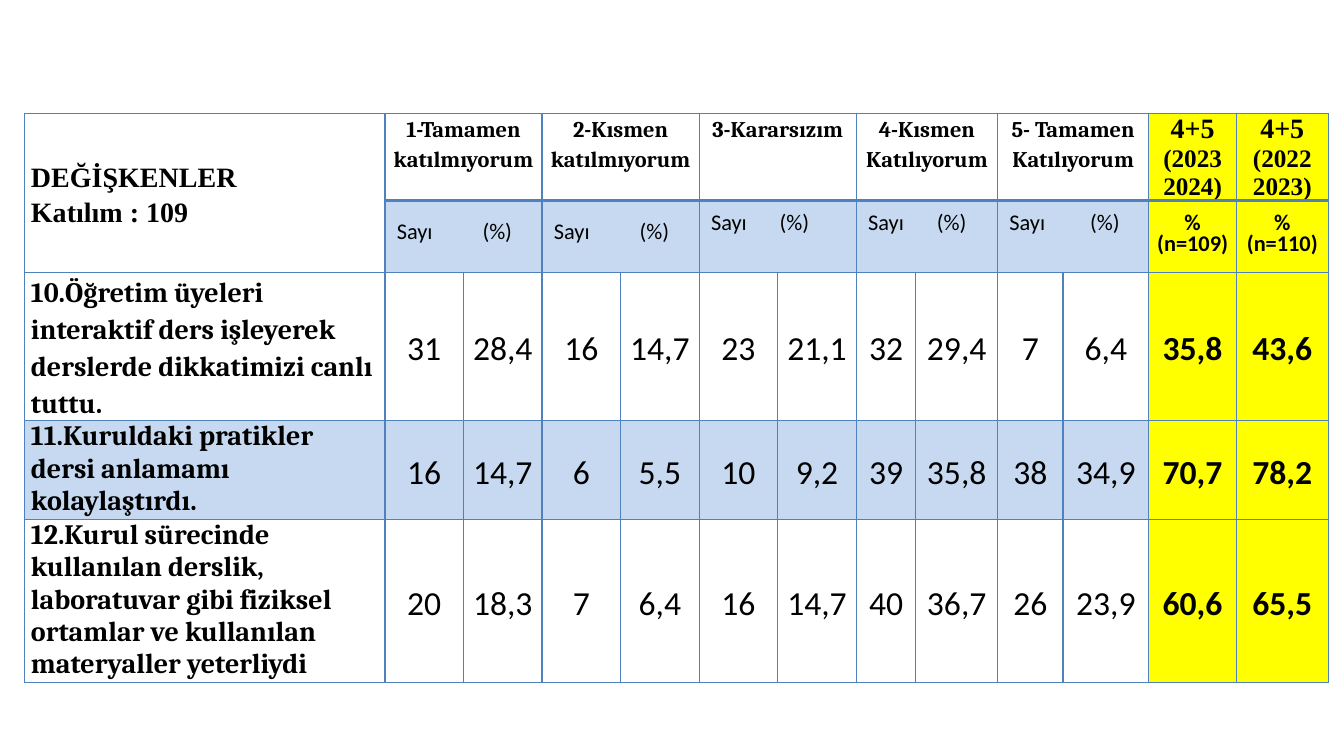
import pptx
import pptx.util
import pptx.dml.color
import pptx.enum.text
import pptx.oxml
from dataclasses import dataclass
from lxml import etree

Cm, Pt = pptx.util.Cm, pptx.util.Pt
ALIGN = pptx.enum.text.PP_ALIGN
ANCHOR = pptx.enum.text.MSO_ANCHOR
A = "{http://schemas.openxmlformats.org/drawingml/2006/main}"


@dataclass(frozen=True)
class Theme:
    ink: str = "000000"
    paper: str = "FFFFFF"
    band: str = "C6D9F1"
    highlight: str = "FFFF00"
    rule: str = "4F81BD"
    heading_font: str = "Times New Roman"
    label_font: str = "Cambria"
    number_font: str = "Calibri"
    small: int = 16
    medium: int = 18
    large: int = 20
    number: int = 24
    thin: float = 1
    thick: float = 2.25
    loose: float = 1.15


THEME = Theme()


def rgb(value):
    return pptx.dml.color.RGBColor.from_string(value)


def write(frame, text, *, font, size, bold=False, align=ALIGN.LEFT, spacing=1.0, tab=None):
    """Add one paragraph to a text frame, using its first one while empty."""
    paragraph = frame.paragraphs[0] if not frame.text else frame.add_paragraph()
    paragraph.alignment = align
    paragraph.line_spacing = spacing
    if tab:
        stops = etree.SubElement(paragraph._p.get_or_add_pPr(), A + "tabLst")
        etree.SubElement(stops, A + "tab", pos=str(Cm(tab)), algn="l")
    run = paragraph.add_run()
    run.text = text
    run.font.name, run.font.size, run.font.bold = font, Pt(size), bold
    run.font.color.rgb = rgb(THEME.ink)


class SurveySlide:
    def __init__(self, presentation, theme):
        self.theme = theme
        self.slide = presentation.slides.add_slide(presentation.slide_layouts[6])

    def table(self, left, top, widths, heights):
        frame = self.slide.shapes.add_table(
            len(heights), len(widths), Cm(left), Cm(top), Cm(sum(widths)), Cm(sum(heights)))
        grid = frame.table
        grid.first_row = grid.horz_banding = False
        for column, width in zip(grid.columns, widths):
            column.width = Cm(width)
        for row, height in zip(grid.rows, heights):
            row.height = Cm(height)
        return grid

    def borders(self, cell, **widths):
        properties = cell._tc.get_or_add_tcPr()
        for side in "LRTB":
            width = widths.get(side, self.theme.thin)
            line = etree.SubElement(properties, f"{A}ln{side}", w=str(Pt(width)))
            fill = etree.SubElement(line, A + "solidFill")
            etree.SubElement(fill, A + "srgbClr", val=self.theme.rule)

    def style_cell(self, cell, fill, anchor=ANCHOR.MIDDLE, **border_widths):
        self.borders(cell, **border_widths)
        cell.fill.solid()
        cell.fill.fore_color.rgb = rgb(fill)
        cell.vertical_anchor = anchor
        cell.margin_left = cell.margin_right = Cm(0.17)
        cell.margin_top = cell.margin_bottom = 0


# Survey content
ANSWERS = [  # heading, tab position of (%), space below the line
    ("1-Tamamen katılmıyorum", 2.16, 0),
    ("2-Kısmen katılmıyorum", 2.16, 0),
    ("3-Kararsızım", 1.73, 0.46),
    ("4-Kısmen Katılıyorum", 1.73, 0.46),
    ("5- Tamamen Katılıyorum", 2.03, 0.46),
]
YEARS = [("(2023 2024)", "(n=109)"), ("(2022 2023)", "(n=110)")]
QUESTIONS = [  # statement, line spacing, values
    ("10.Öğretim üyeleri interaktif ders işleyerek derslerde dikkatimizi canlı tuttu.",
     THEME.loose, "31 28,4 16 14,7 23 21,1 32 29,4 7 6,4 35,8 43,6"),
    ("11.Kuruldaki pratikler dersi anlamamı kolaylaştırdı.",
     1.0, "16 14,7 6 5,5 10 9,2 39 35,8 38 34,9 70,7 78,2"),
    ("12.Kurul sürecinde kullanılan derslik, laboratuvar gibi fiziksel ortamlar "
     "ve kullanılan materyaller yeterliydi",
     1.0, "20 18,3 7 6,4 16 14,7 40 36,7 26 23,9 60,6 65,5"),
]
COLUMN_WIDTHS = [9.09] + [1.98] * 6 + [1.5, 2.06, 1.65, 2.16, 2.21, 2.31]
ROW_HEIGHTS = [2.18, 1.8, 3.73, 2.49, 4.11]
FIRST_YEAR = 1 + 2 * len(ANSWERS)


def main():
    presentation = pptx.Presentation()
    presentation.slide_width, presentation.slide_height = Cm(33.87), Cm(19.05)
    survey = SurveySlide(presentation, THEME)
    grid = survey.table(0.61, 2.87, COLUMN_WIDTHS, ROW_HEIGHTS)

    # Fills and borders, with a thick rule between the two heading rows
    for r in range(len(ROW_HEIGHTS)):
        for c in range(len(COLUMN_WIDTHS)):
            banded = r == 3 or (r == 1 and c > 0)
            fill = THEME.band if banded else THEME.paper
            if c >= FIRST_YEAR:
                fill = THEME.highlight
            top_aligned = (r == 0 and c > 0) or (r > 1 and c == 0)
            thick = {{0: "B", 1: "T"}[r]: THEME.thick} if r < 2 and c > 0 else {}
            survey.style_cell(grid.cell(r, c), fill,
                              ANCHOR.TOP if top_aligned else ANCHOR.MIDDLE, **thick)

    # Variables heading
    variables = grid.cell(0, 0)
    variables.merge(grid.cell(1, 0))
    for line in ("DEĞİŞKENLER", "Katılım : 109"):
        write(variables.text_frame, line, font=THEME.heading_font, size=THEME.large,
              bold=True, spacing=THEME.loose)

    # Answer headings over count and percentage
    for i, (answer, tab, space_below) in enumerate(ANSWERS):
        c = 1 + 2 * i
        heading, units = grid.cell(0, c), grid.cell(1, c)
        heading.merge(grid.cell(0, c + 1))
        units.merge(grid.cell(1, c + 1))
        write(heading.text_frame, answer, font=THEME.label_font, size=THEME.small,
              bold=True, align=ALIGN.CENTER, spacing=THEME.loose)
        units.margin_left, units.margin_bottom = Cm(0.3), Cm(space_below)
        write(units.text_frame, "Sayı\t(%)", font=THEME.number_font, size=THEME.small,
              spacing=Pt(13), tab=tab)

    # Yearly totals headings
    for c, (year, count) in enumerate(YEARS, FIRST_YEAR):
        for line, size in (("4+5", THEME.large), (year, THEME.medium)):
            write(grid.cell(0, c).text_frame, line, font=THEME.heading_font, size=size,
                  bold=True, align=ALIGN.CENTER)
        for line in ("%", count):
            write(grid.cell(1, c).text_frame, line, font=THEME.number_font,
                  size=THEME.small, bold=True, align=ALIGN.CENTER, spacing=Pt(15))

    # Statements and their results
    for r, (statement, spacing, values) in enumerate(QUESTIONS, 2):
        write(grid.cell(r, 0).text_frame, statement, font=THEME.label_font,
              size=THEME.large, bold=True, spacing=spacing)
        for c, value in enumerate(values.split(), 1):
            write(grid.cell(r, c).text_frame, value, font=THEME.number_font,
                  size=THEME.number, bold=c >= FIRST_YEAR, align=ALIGN.CENTER,
                  spacing=THEME.loose)

    presentation.save("out.pptx")


if __name__ == "__main__":
    main()
